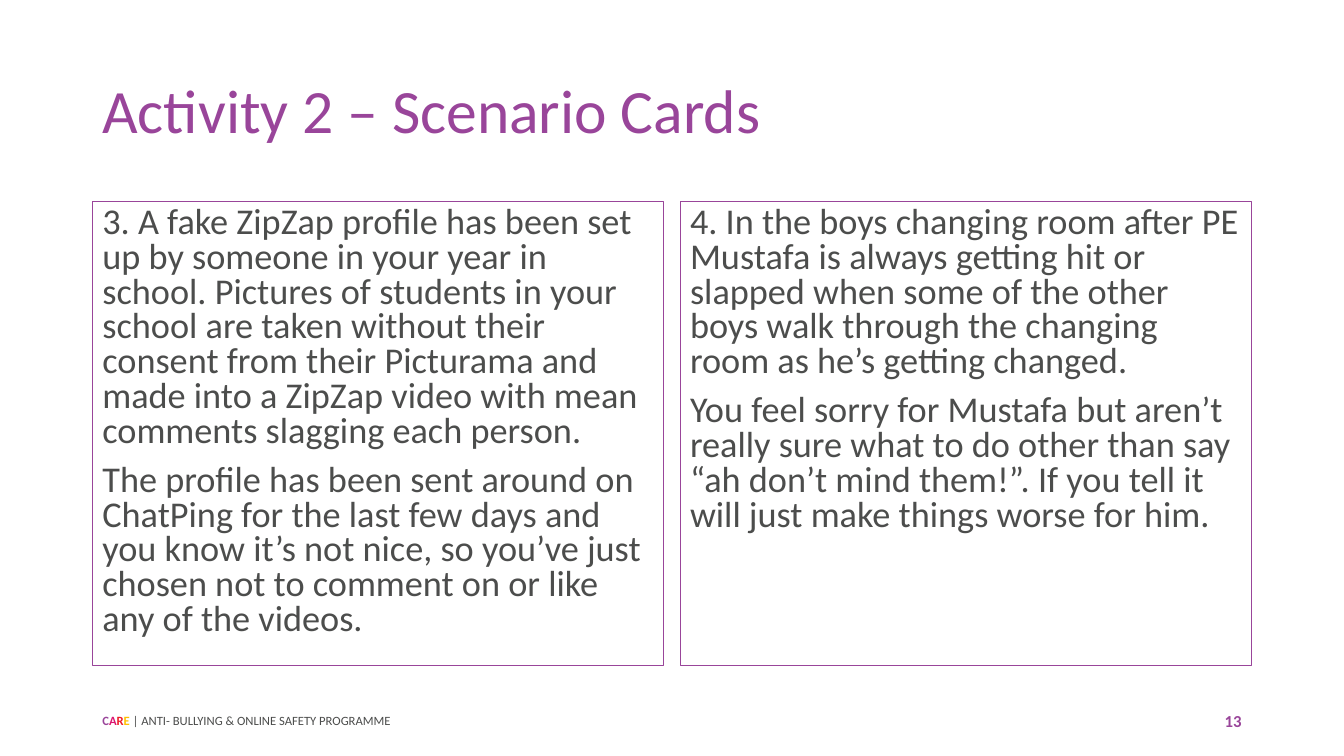
"""Build the Activity 2 scenario cards slide."""
from dataclasses import dataclass

from pptx import Presentation
from pptx.dml.color import RGBColor
from pptx.enum.text import MSO_ANCHOR, PP_ALIGN
from pptx.util import Cm, Pt


@dataclass(frozen=True)
class Theme:
    font: str = "Calibri"
    purple: str = "99459A"
    pink: str = "DB156F"
    red: str = "ED1C27"
    amber: str = "FFC000"
    grey: str = "4C4D4C"
    title_size: float = 44
    card_size: float = 25.9
    number_size: float = 12
    footer_size: float = 9


def add_box(page, left, top, width, height, anchor=MSO_ANCHOR.MIDDLE):
    box = page.shapes.add_textbox(Cm(left), Cm(top), Cm(width), Cm(height))
    box.text_frame.word_wrap = True
    box.text_frame.vertical_anchor = anchor
    return box


def add_span(para, text, size, color, bold=False):
    span = para.add_run()
    span.text = text
    span.font.name = theme.font
    span.font.size = Pt(size)
    span.font.bold = bold
    span.font.color.rgb = RGBColor.from_string(color)


theme = Theme()
deck = Presentation()
deck.slide_width, deck.slide_height = Cm(33.87), Cm(19.05)
page = deck.slides.add_slide(deck.slide_layouts[6])

margin = 2.33
content_width = 29.21

title = add_box(page, margin, 1.01, content_width, 3.68)
title_para = title.text_frame.paragraphs[0]
title_para.line_spacing = 0.9
add_span(title_para, "Activity 2 – Scenario Cards", theme.title_size, theme.purple)

cards = [
    [
        "3. A fake ZipZap profile has been set up by someone in your year in school. "
        "Pictures of students in your school are taken without their consent from their "
        "Picturama and made into a ZipZap video with mean comments slagging each person.",
        "The profile has been sent around on ChatPing for the last few days and you know "
        "it’s not nice, so you’ve just chosen not to comment on or like any of the videos.",
    ],
    [
        "4. In the boys changing room after PE Mustafa is always getting hit or slapped when "
        "some of the other boys walk through the changing room as he’s getting changed.",
        "You feel sorry for Mustafa but aren’t really sure what to do other than say "
        "“ah don’t mind them!”. If you tell it will just make things worse for him.",
    ],
]
card_width = 14.4
card_step = content_width - card_width

for column, paragraphs in enumerate(cards):
    card = add_box(page, margin + column * card_step, 5.08, card_width, 11.68, MSO_ANCHOR.TOP)
    card.line.color.rgb = RGBColor.from_string(theme.purple)
    card.line.width = Pt(0.75)
    for index, text in enumerate(paragraphs):
        para = card.text_frame.add_paragraph() if index else card.text_frame.paragraphs[0]
        para.line_spacing = 0.8
        if index:
            para.space_before = Pt(10)
        add_span(para, text, theme.card_size, theme.grey)

footer_top = 17.65
footer_height = 1.02

number = add_box(page, 23.92, footer_top, 7.62, footer_height)
number_para = number.text_frame.paragraphs[0]
number_para.alignment = PP_ALIGN.RIGHT
add_span(number_para, "13", theme.number_size, theme.purple, bold=True)

footer = add_box(page, margin, footer_top, 11.43, footer_height)
footer_para = footer.text_frame.paragraphs[0]
for letter, color in zip("CARE", [theme.purple, theme.pink, theme.red, theme.amber]):
    add_span(footer_para, letter, theme.footer_size, color, bold=True)
add_span(footer_para, " | ANTI- BULLYING & ONLINE SAFETY PROGRAMME", theme.footer_size, theme.grey)

deck.save("out.pptx")
